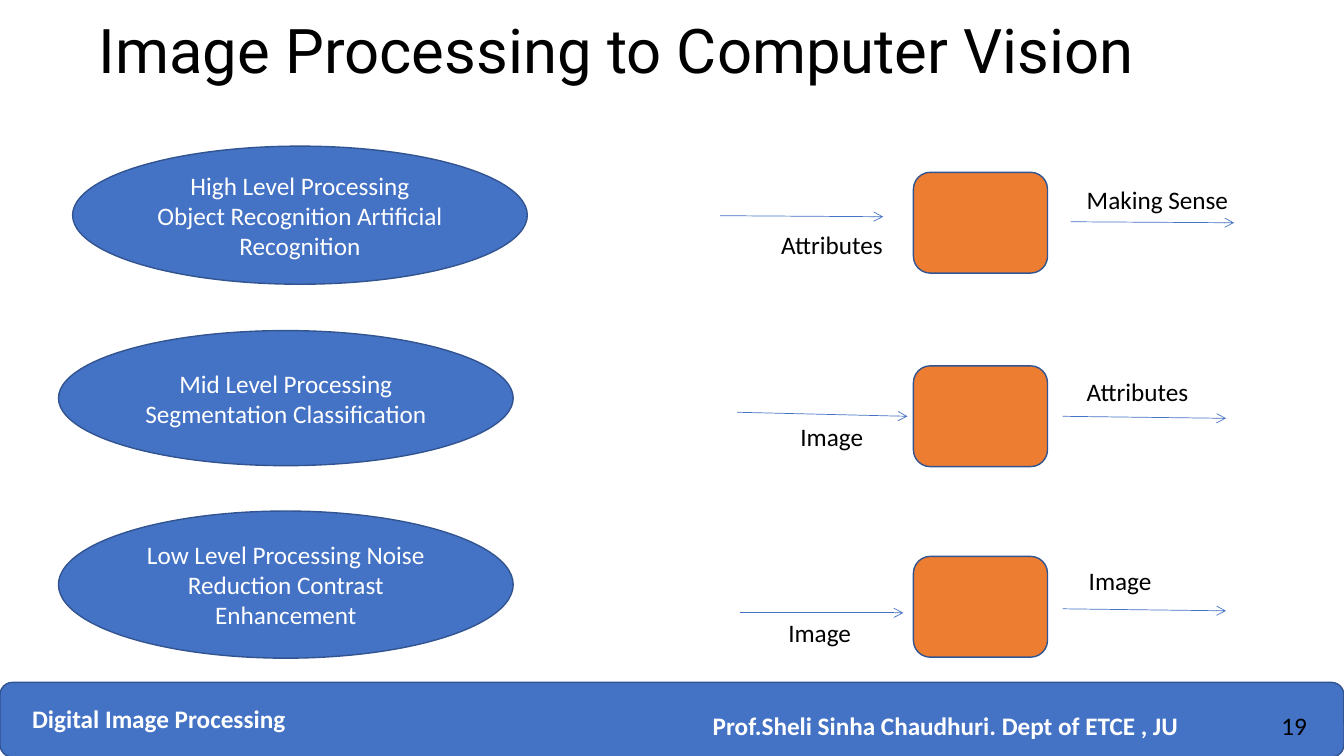
from pptx import Presentation
from pptx.dml.color import RGBColor
from pptx.enum.shapes import MSO_CONNECTOR, MSO_SHAPE
from pptx.enum.text import MSO_ANCHOR, MSO_AUTO_SIZE, PP_ALIGN
from pptx.oxml.ns import qn
from pptx.util import Inches, Pt
from lxml.etree import SubElement

BLUE, DARK_BLUE, ORANGE = "4472C4", "325491", "ED7D31"
WHITE, BLACK = "FFFFFF", "000000"
color = RGBColor.from_string

presentation = Presentation()
presentation.slide_width = Inches(13.33)
presentation.slide_height = Inches(7.5)
slide = presentation.slides.add_slide(presentation.slide_layouts[5])


def add_filled_shape(kind, left, top, width, height, fill, lines=()):
    """Draw an outlined shape with one centred white paragraph per line."""
    shape = slide.shapes.add_shape(
        kind, Inches(left), Inches(top), Inches(width), Inches(height))
    shape.shadow.inherit = False
    shape.fill.solid()
    shape.fill.fore_color.rgb = color(fill)
    shape.line.color.rgb = color(DARK_BLUE)
    shape.line.width = Pt(1)
    frame = shape.text_frame
    frame.word_wrap = True
    frame.vertical_anchor = MSO_ANCHOR.MIDDLE
    for index, line in enumerate(lines):
        paragraph = frame.paragraphs[0] if index == 0 else frame.add_paragraph()
        paragraph.alignment = PP_ALIGN.CENTER
        run = paragraph.add_run()
        run.text = line
        run.font.name = "Calibri"
        run.font.size = Pt(18)
        run.font.color.rgb = color(WHITE)


def add_label(text, left, top, width, text_color=BLACK, bold=False):
    box = slide.shapes.add_textbox(
        Inches(left), Inches(top), Inches(width), Inches(0.4))
    box.text_frame.word_wrap = False
    box.text_frame.auto_size = MSO_AUTO_SIZE.SHAPE_TO_FIT_TEXT
    run = box.text_frame.paragraphs[0].add_run()
    run.text = text
    run.font.name = "Calibri"
    run.font.size = Pt(18)
    run.font.bold = bold
    run.font.color.rgb = color(text_color)


# Footer
add_filled_shape(MSO_SHAPE.ROUNDED_RECTANGLE, 0, 6.77, 13.33, 0.74, BLUE)
add_label("Digital Image Processing", 0.22, 6.93, 2.73, WHITE, True)
add_label("Prof.Sheli Sinha Chaudhuri. Dept of ETCE , JU", 6.97, 7, 4.92, WHITE, True)
add_label("19", 12.61, 7, 0.5)

# Title
title = slide.shapes.title
title.left, title.top = Inches(0.88), Inches(0.26)
title.width, title.height = Inches(11.5), Inches(0.54)
title.text_frame.word_wrap = True
title.text_frame.auto_size = MSO_AUTO_SIZE.NONE
title.text_frame.vertical_anchor = MSO_ANCHOR.MIDDLE
paragraph = title.text_frame.paragraphs[0]
paragraph.alignment = PP_ALIGN.LEFT
paragraph.line_spacing = 0.9
run = paragraph.add_run()
run.text = "Image Processing to Computer Vision"
run.font.name = "Roboto"
run.font.size = Pt(44)
run.font.color.rgb = color(BLACK)

# Processing levels: left, top, height, lines
levels = [
    (0.72, 1.45, 1.37, ["High Level Processing",
                        "Object Recognition Artificial Recognition"]),
    (0.58, 3.28, 1.34, ["Mid Level Processing", "Segmentation Classification"]),
    (0.58, 5.07, 1.46, ["Low Level Processing Noise Reduction Contrast Enhancement"]),
]
for left, top, height, lines in levels:
    add_filled_shape(MSO_SHAPE.OVAL, left, top, 4.51, height, BLUE, lines)

for top in (1.71, 3.63, 5.52):
    add_filled_shape(MSO_SHAPE.ROUNDED_RECTANGLE, 9.06, top, 1.33, 1, ORANGE)

# Input and output arrows: start x, start y, end x, end y
arrows = [
    (7.14, 2.14, 8.76, 2.15), (10.62, 2.2, 12.24, 2.21),
    (7.31, 4.09, 9, 4.13), (10.54, 4.13, 12.16, 4.15),
    (7.34, 6.08, 8.96, 6.08), (10.54, 6.04, 12.16, 6.06),
]
for points in arrows:
    arrow = slide.shapes.add_connector(
        MSO_CONNECTOR.STRAIGHT, *[Inches(point) for point in points])
    arrow.line.color.rgb = color(BLUE)
    arrow.line.width = Pt(0.5)
    SubElement(arrow.line._get_or_add_ln(), qn("a:tailEnd"), type="arrow")
    SubElement(arrow._element.spPr, qn("a:effectLst"))

# Input and output labels: text, left, top, width
labels = [
    ("Attributes", 7.65, 2.23, 1.22), ("Making Sense", 10.68, 1.78, 1.62),
    ("Image", 7.84, 4.13, 0.83), ("Attributes", 10.68, 3.68, 1.22),
    ("Image", 7.72, 6.08, 0.83), ("Image", 10.7, 5.56, 0.83),
]
for label in labels:
    add_label(*label)

presentation.save("out.pptx")
